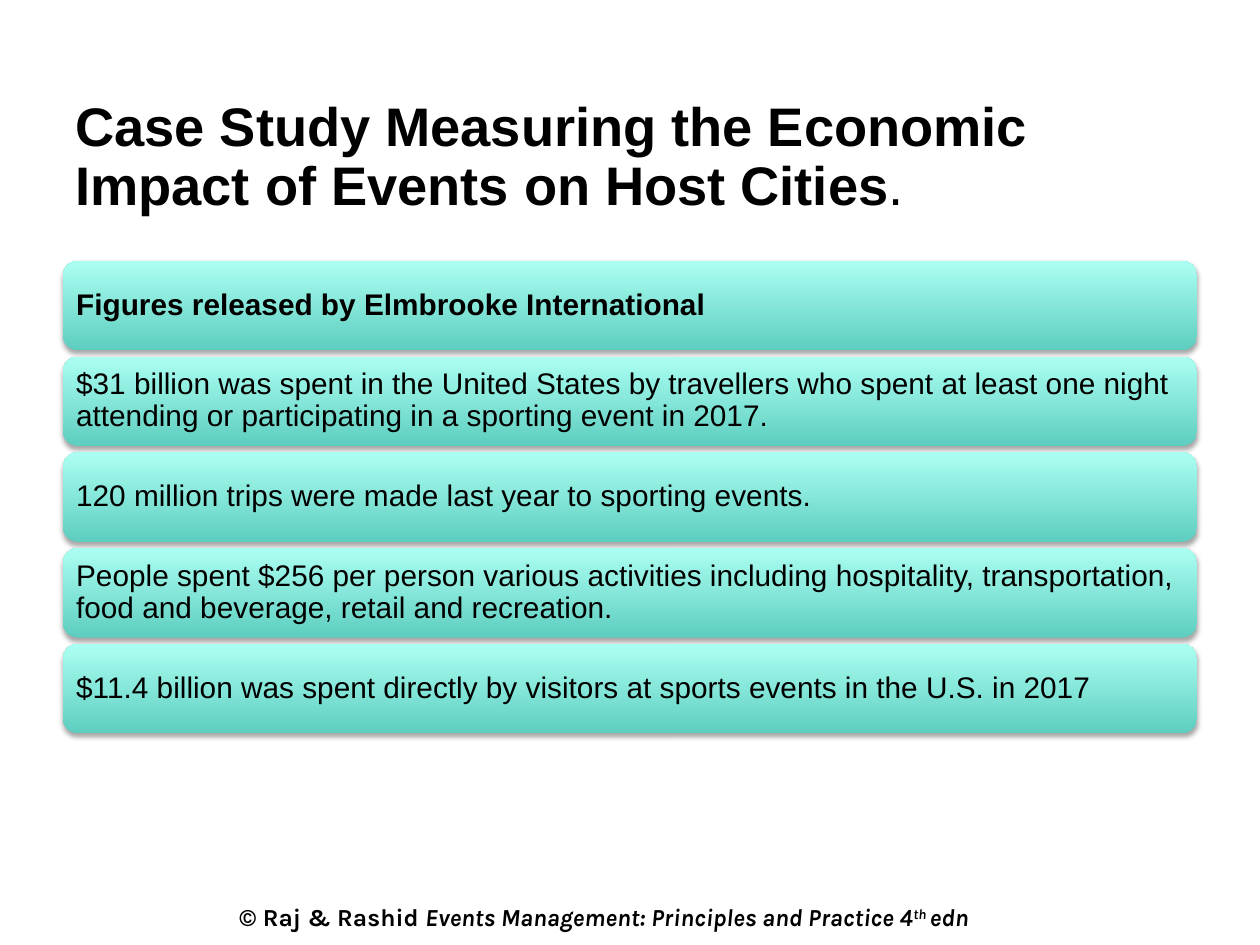
from dataclasses import dataclass

from lxml.etree import SubElement
from pptx import Presentation
from pptx.dml.color import RGBColor
from pptx.enum.shapes import MSO_SHAPE as Shape
from pptx.enum.text import MSO_ANCHOR as Anchor, PP_ALIGN as Align
from pptx.oxml.ns import qn
from pptx.util import Emu, Pt

EMU_PER_PX = 9144


def px(length):
    return Emu(length * EMU_PER_PX)


def apply(target, formats):
    for name, value in formats.items():
        setattr(target, name, value)


@dataclass(frozen=True)
class Theme:
    ink: str = "000000"
    card_bottom: str = "5ECEC0"
    card_top: str = "ABFFF2"
    body_font: str = "Arial"
    footer_font: str = "Karla"
    title_size: int = 31
    card_size: int = 17
    footer_size: int = 14


class SlideBuilder:
    def __init__(self, slide, theme):
        self.slide = slide
        self.theme = theme

    def fill_frame(self, frame, runs, font, size, frame_formats, line_spacing=None):
        apply(frame, frame_formats)
        paragraph = frame.paragraphs[0]
        apply(paragraph, {"alignment": Align.LEFT, "line_spacing": line_spacing})
        for words, formats, baseline in runs:
            run = paragraph.add_run()
            run.text = words
            apply(run.font, {"name": font, "size": Pt(size), **formats})
            run.font.color.rgb = RGBColor.from_string(self.theme.ink)
            if baseline:
                run.font._element.set("baseline", str(baseline * 1000))

    def text(self, box, *args, **options):
        holder = self.slide.shapes.add_textbox(*map(px, box))
        self.fill_frame(holder.text_frame, *args, **options)

    def card(self, box, words, bold):
        theme = self.theme
        card = self.slide.shapes.add_shape(Shape.ROUNDED_RECTANGLE, *map(px, box))
        card.fill.gradient()
        card.fill.gradient_angle = 90
        for stop, colour in zip(card.fill.gradient_stops, (theme.card_bottom, theme.card_top)):
            stop.color.rgb = RGBColor.from_string(colour)
        card.line.fill.background()
        self.drop_shadow(card)
        margins = {f"margin_{side}": px(7) for side in ("left", "top", "right", "bottom")}
        self.fill_frame(
            card.text_frame, [(words, {"bold": bold}, 0)], theme.body_font, theme.card_size,
            {"word_wrap": True, "vertical_anchor": Anchor.MIDDLE, **margins}, line_spacing=0.9,
        )

    def drop_shadow(self, shape):
        shape.shadow.inherit = False
        effects = shape._element.spPr.find(qn("a:effectLst"))
        shadow = SubElement(
            effects, qn("a:outerShdw"),
            blurRad=str(Pt(3.1)), dist=str(Pt(1.8)), dir="5400000", rotWithShape="0",
        )
        colour = SubElement(shadow, qn("a:srgbClr"), val=self.theme.ink)
        SubElement(colour, qn("a:alpha"), val="35000")


FINDINGS = [
    "Figures released by Elmbrooke International",
    "$31 billion was spent in the United States by travellers who spent at least one night "
    "attending or participating in a sporting event in 2017.",
    "120 million trips were made last year to sporting events.",
    "People spent $256 per person various activities including hospitality, transportation, "
    "food and beverage, retail and recreation.",
    "$11.4 billion was spent directly by visitors at sports events in the U.S. in 2017",
]


def main():
    deck = Presentation()
    apply(deck, {"slide_width": px(1000), "slide_height": px(750)})
    theme = Theme()
    page = SlideBuilder(deck.slides.add_slide(deck.slide_layouts[6]), theme)

    upright = {"bold": True}
    slanted = {"bold": True, "italic": True}
    copyright_runs = [
        ("© Raj & Rashid ", upright, 0),
        ("Events Management: Principles and Practice 4", slanted, 0),
        ("th ", slanted, 30),
        ("edn", slanted, 0),
    ]
    page.text((180, 711, 697, 34), copyright_runs, theme.footer_font, theme.footer_size,
              {"word_wrap": False})

    title_runs = [
        ("Case Study Measuring the Economic Impact of Events on Host Cities", upright, 0),
        (".", {"bold": False}, 0),
    ]
    page.text((50, 73, 900, 105), title_runs, theme.body_font, theme.title_size,
              {"word_wrap": True, "vertical_anchor": Anchor.MIDDLE}, line_spacing=0.9)

    first_top, card_height, gap = 207, 71, 5
    for row, finding in enumerate(FINDINGS):
        top = first_top + row * (card_height + gap)
        page.card((50, top, 900, card_height), finding, bold=row == 0)

    deck.save("out.pptx")


if __name__ == "__main__":
    main()
